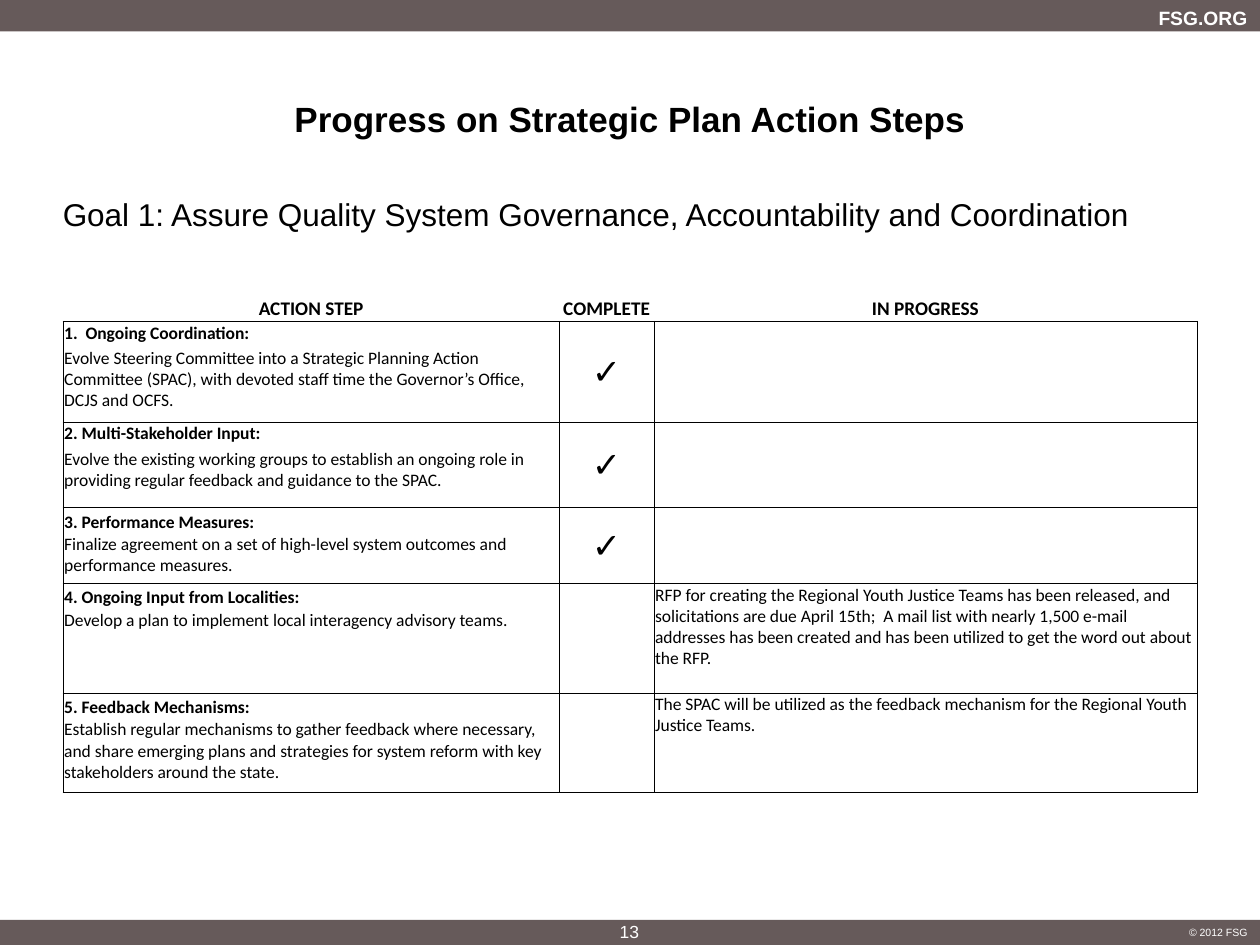
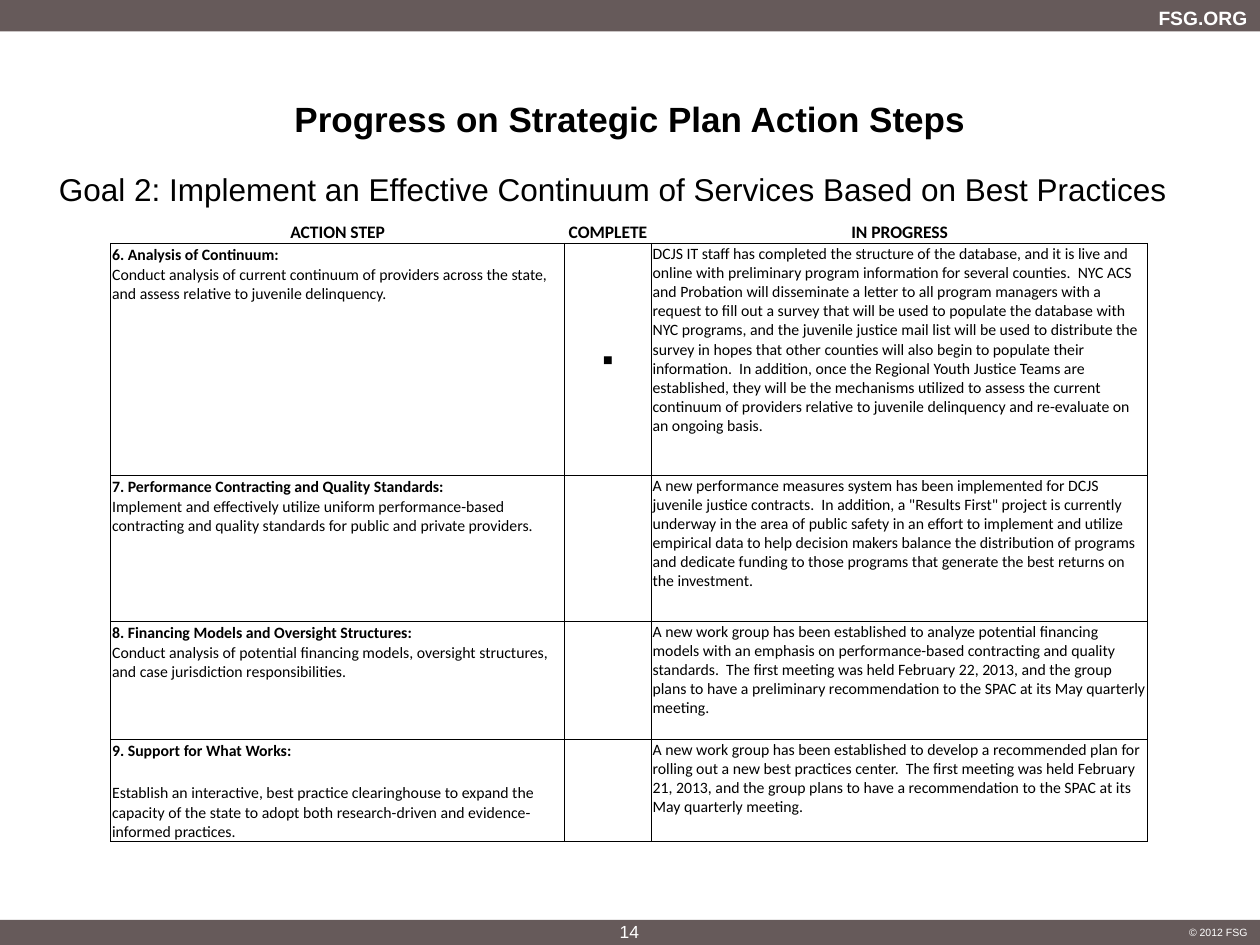
from dataclasses import dataclass

from lxml.etree import SubElement
from pptx import Presentation
from pptx.dml.color import RGBColor
from pptx.enum.shapes import MSO_SHAPE
from pptx.enum.text import MSO_ANCHOR as Anchor, MSO_AUTO_SIZE as AutoSize, PP_ALIGN as Align
from pptx.oxml.ns import qn
from pptx.util import Inches, Pt

COLORS = {"band": "665A5A", "ink": "000000", "light": "FFFFFF"}
SANS, TABLE_FONT = "Arial", "Calibri"
TITLE = "Progress on Strategic Plan Action Steps"
HEADERS = ("ACTION STEP", "COMPLETE", "IN PROGRESS")
BORDER_WIDTH = Pt(0.5)
CELL_MARGINS = {"margin_left": 0.01, "margin_top": 0.01, "margin_right": 0.01, "margin_bottom": 0}


@dataclass
class Step:
    heading: str
    description: str
    heights: tuple
    mark: str = ""
    progress: str = ""
    heading_anchor: Anchor = Anchor.BOTTOM
    description_anchor: Anchor = Anchor.TOP


@dataclass
class Goal:
    page: int
    text: str
    text_box: tuple
    table_box: tuple
    columns: tuple
    spacer_rows: tuple
    header_height: float
    header_size: int
    text_size: int
    mark_size: int
    steps: tuple


GOALS = (
    Goal(
        page=13,
        text="Goal 1: Assure Quality System Governance, Accountability and Coordination",
        text_box=(0.4, 1.5, 9.2, 4.83),
        table_box=(0.5, 1.67, 9, 4.65),
        columns=(3.94, 0.75, 4.31),
        spacer_rows=(0.46, 0.21),
        header_height=0.21,
        header_size=11,
        text_size=10,
        mark_size=20,
        steps=(
            Step("1.  Ongoing Coordination:",
                 "Evolve Steering Committee into a Strategic Planning Action Committee (SPAC), "
                 "with devoted staff time the Governor’s Office, DCJS and OCFS.",
                 (0.2, 0.6), mark="✓", heading_anchor=Anchor.TOP),
            Step("2. Multi-Stakeholder Input:",
                 "Evolve the existing working groups to establish an ongoing role in providing "
                 "regular feedback and guidance to the SPAC.",
                 (0.2, 0.48), mark="✓", heading_anchor=Anchor.TOP),
            Step("3. Performance Measures:",
                 "Finalize agreement on a set of high-level system outcomes and performance measures.",
                 (0.2, 0.4), mark="✓"),
            Step("4. Ongoing Input from Localities:",
                 "Develop a plan to implement local interagency advisory teams.",
                 (0.2, 0.67),
                 progress="RFP for creating the Regional Youth Justice Teams has been released, and "
                 "solicitations are due April 15th;  A mail list with nearly 1,500 e-mail addresses "
                 "has been created and has been utilized to get the word out about the RFP."),
            Step("5. Feedback Mechanisms:",
                 "Establish regular mechanisms to gather feedback where necessary, and share emerging "
                 "plans and strategies for system reform with key stakeholders around the state.",
                 (0.2, 0.59),
                 progress="The SPAC will be utilized as the feedback mechanism for the Regional "
                 "Youth Justice Teams."),
        ),
    ),
    Goal(
        page=14,
        text="Goal 2: Implement an Effective Continuum of Services Based on Best Practices",
        text_box=(0.37, 1.3, 9.2, 4.83),
        table_box=(0.88, 1.75, 8.23, 4.95),
        columns=(3.6, 0.69, 3.94),
        spacer_rows=(),
        header_height=0.18,
        header_size=10,
        text_size=9,
        mark_size=18,
        steps=(
            Step("6. Analysis of Continuum:",
                 "Conduct analysis of current continuum of providers across the state, and assess "
                 "relative to juvenile delinquency.",
                 (0.17, 1.67), mark="▪",
                 progress="DCJS IT staff has completed the structure of the database, and it is live "
                 "and online with preliminary program information for several counties.  NYC ACS and "
                 "Probation will disseminate a letter to all program managers with a request to fill "
                 "out a survey that will be used to populate the database with NYC programs, and the "
                 "juvenile justice mail list will be used to distribute the survey in hopes that other "
                 "counties will also begin to populate their information.  In addition, once the "
                 "Regional Youth Justice Teams are established, they will be the mechanisms utilized "
                 "to assess the current continuum of providers relative to juvenile delinquency and "
                 "re-evaluate on an ongoing basis."),
            Step("7. Performance Contracting and Quality Standards:",
                 "Implement and effectively utilize uniform performance-based contracting and quality "
                 "standards for public and private providers.",
                 (0.17, 0.99),
                 progress="A new performance measures system has been implemented for DCJS juvenile "
                 "justice contracts.  In addition, a \"Results First\" project is currently underway "
                 "in the area of public safety in an effort to implement and utilize empirical data "
                 "to help decision makers balance the distribution of programs and dedicate funding "
                 "to those programs that generate the best returns on the investment."),
            Step("8. Financing Models and Oversight Structures:",
                 "Conduct analysis of potential financing models, oversight structures, and case "
                 "jurisdiction responsibilities.",
                 (0.17, 0.77),
                 progress="A new work group has been established to analyze potential financing models "
                 "with an emphasis on performance-based contracting and quality standards.  The first "
                 "meeting was held February 22, 2013, and the group plans to have a preliminary "
                 "recommendation to the SPAC at its May quarterly meeting."),
            Step("9. Support for What Works:",
                 "Establish an interactive, best practice clearinghouse to expand the capacity of the "
                 "state to adopt both research-driven and evidence-informed practices.",
                 (0.17, 0.64),
                 progress="A new work group has been established to develop a recommended plan for "
                 "rolling out a new best practices center.  The first meeting was held February 21, "
                 "2013, and the group plans to have a recommendation to the SPAC at its May quarterly "
                 "meeting.",
                 description_anchor=Anchor.BOTTOM),
        ),
    ),
)


def to_inches(box):
    return [Inches(length) for length in box]


def set_attributes(target, values):
    for name, value in values.items():
        setattr(target, name, value)


def write_text(frame, text, size, font=SANS, color="ink", bold=False, align=Align.LEFT):
    paragraph = frame.paragraphs[0]
    paragraph.alignment = align
    run = paragraph.add_run()
    run.text = text
    set_attributes(run.font, {"name": font, "size": Pt(size), "bold": bold})
    run.font.color.rgb = RGBColor.from_string(COLORS[color])


def add_text(slide, box, text, size, margins=(0.1, 0.05), anchor=Anchor.TOP, grow=False, **style):
    frame = slide.shapes.add_textbox(*to_inches(box)).text_frame
    across, down = to_inches(margins)
    set_attributes(frame, {
        "margin_left": across, "margin_right": across,
        "margin_top": down, "margin_bottom": down,
        "vertical_anchor": anchor, "word_wrap": not grow,
        "auto_size": AutoSize.SHAPE_TO_FIT_TEXT if grow else AutoSize.NONE,
    })
    write_text(frame, text, size, **style)


def add_band(slide, box):
    band = slide.shapes.add_shape(MSO_SHAPE.RECTANGLE, *to_inches(box))
    band.shadow.inherit = False
    band.fill.solid()
    band.fill.fore_color.rgb = RGBColor.from_string(COLORS["band"])
    band.line.fill.background()


def add_frame(slide, page):
    add_band(slide, (0, 0, 10, 0.25))
    add_band(slide, (0, 7.3, 10, 0.2))
    label = {"color": "light", "anchor": Anchor.MIDDLE, "grow": True}
    add_text(slide, (4.81, 7.29, 0.37, 0.21), str(page), 10, margins=(0.1, 0.02),
             align=Align.CENTER, **label)
    add_text(slide, (9.09, 0, 0.91, 0.29), "FSG.ORG", 11, bold=True, align=Align.RIGHT, **label)
    add_text(slide, (9.33, 7.3, 0.67, 0.2), "© 2012 FSG", 6, align=Align.RIGHT, **label)
    add_text(slide, (0.43, 0.58, 9.14, 0.72), TITLE, 20, margins=(0.1, 0),
             anchor=Anchor.MIDDLE, bold=True, align=Align.CENTER)


def format_cell(cell, sides="", anchor=Anchor.TOP, text="", size=8, **style):
    set_attributes(cell, {name: Inches(value) for name, value in CELL_MARGINS.items()})
    cell.vertical_anchor = anchor
    properties = cell._tc.get_or_add_tcPr()
    for side in "LRTB":
        line = SubElement(properties, qn(f"a:ln{side}"), w=str(BORDER_WIDTH))
        if side in sides:
            fill = SubElement(line, qn("a:solidFill"))
            SubElement(fill, qn("a:srgbClr"), val=COLORS["ink"])
        else:
            SubElement(line, qn("a:noFill"))
    cell.fill.background()
    if text:
        write_text(cell.text_frame, text, size, **style)
    else:
        SubElement(cell.text_frame.paragraphs[0]._p, qn("a:endParaRPr"), sz=str(size * 100))


def fill_step(table, row, step, goal):
    body = {"size": goal.text_size, "font": TABLE_FONT}
    format_cell(table.cell(row, 0), "LRT", step.heading_anchor, step.heading, bold=True, **body)
    format_cell(table.cell(row + 1, 0), "LRB", step.description_anchor, step.description, **body)
    mark_size = goal.mark_size if step.mark else goal.text_size
    format_cell(table.cell(row, 1), "LRTB", Anchor.MIDDLE, step.mark, mark_size, align=Align.CENTER)
    format_cell(table.cell(row, 2), "LRTB", text=step.progress, **body)
    for column in (1, 2):
        format_cell(table.cell(row + 1, column), "LRB")
        table.cell(row, column).merge(table.cell(row + 1, column))


def add_step_table(slide, goal):
    heights = [*goal.spacer_rows, goal.header_height]
    for step in goal.steps:
        heights.extend(step.heights)
    table = slide.shapes.add_table(len(heights), len(HEADERS), *to_inches(goal.table_box)).table
    set_attributes(table, {"first_row": False, "horz_banding": False})
    for column, width in zip(table.columns, goal.columns):
        column.width = Inches(width)
    for row, height in zip(table.rows, heights):
        row.height = Inches(height)

    header_row = len(goal.spacer_rows)
    for column, header in enumerate(HEADERS):
        for spacer in range(header_row):
            format_cell(table.cell(spacer, column))
        format_cell(table.cell(header_row, column), "B", Anchor.BOTTOM, header, goal.header_size,
                    font=TABLE_FONT, bold=True, align=Align.CENTER)
    if header_row:
        table.cell(0, 0).merge(table.cell(0, len(HEADERS) - 1))
    for index, step in enumerate(goal.steps):
        fill_step(table, header_row + 1 + 2 * index, step, goal)


def add_goal_slide(presentation, goal):
    slide = presentation.slides.add_slide(presentation.slide_layouts[6])
    add_frame(slide, goal.page)
    add_text(slide, goal.text_box, goal.text, 18)
    add_step_table(slide, goal)


def main():
    presentation = Presentation()
    set_attributes(presentation, {"slide_width": Inches(10), "slide_height": Inches(7.5)})
    for goal in GOALS:
        add_goal_slide(presentation, goal)
    presentation.save("out.pptx")


if __name__ == "__main__":
    main()
